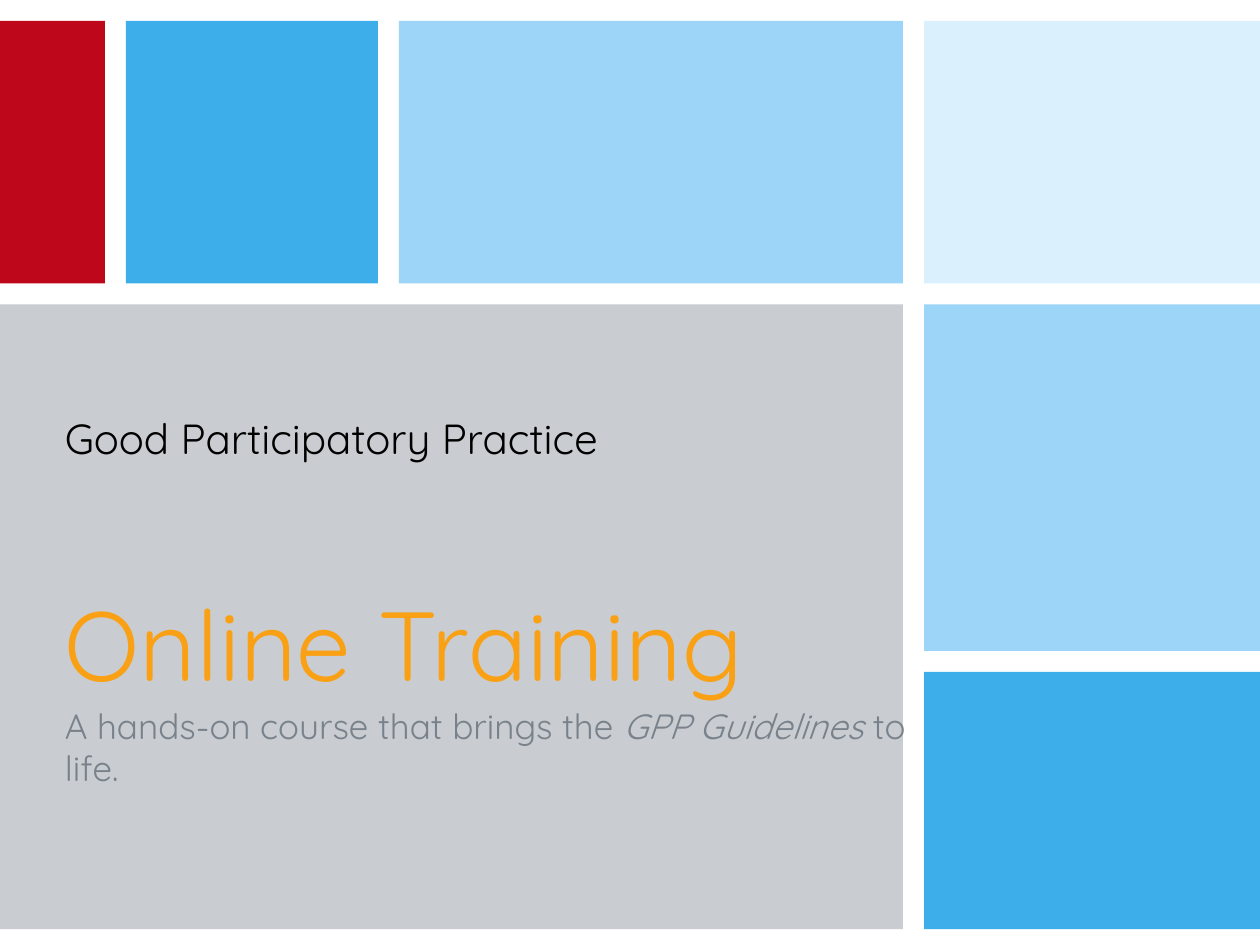
from pptx import Presentation
from pptx.dml.color import RGBColor
from pptx.enum.shapes import MSO_SHAPE as Shape
from pptx.enum.text import MSO_ANCHOR as Anchor
from pptx.util import Inches, Pt

COLORS = {
    "red": "BF071C",
    "blue": "3DAEEA",
    "sky": "9CD5F7",
    "pale": "DAF0FD",
    "panel": "C9CDD1",
    "black": "000000",
    "orange": "FAA014",
    "slate": "79828B",
}
FONT = "Quicksand"
COLUMNS, ROWS = 60, 45
CELL = Inches(10) / COLUMNS

# Mosaic edges in grid cells; neighbouring tiles are one cell apart.
TOP_BAND = (1, 13.5)
LOWER_BAND = (14.5, 44.25)
RIGHT_BAND = (44, COLUMNS)
TILES = [
    ((0, 43), LOWER_BAND, "panel"),
    ((0, 5), TOP_BAND, "red"),
    ((6, 18), TOP_BAND, "blue"),
    ((19, 43), TOP_BAND, "sky"),
    (RIGHT_BAND, TOP_BAND, "pale"),
    (RIGHT_BAND, (14.5, 31), "sky"),
    (RIGHT_BAND, (32, 44.25), "blue"),
]


def grid_box(columns, rows):
    """Turn column and row edges into left, top, width and height."""
    (left, right), (top, bottom) = columns, rows
    return [round(n * CELL) for n in (left, top, right - left, bottom - top)]


def add_tile(slide, columns, rows, color):
    tile = slide.shapes.add_shape(Shape.RECTANGLE, *grid_box(columns, rows))
    tile.shadow.inherit = False
    tile.fill.solid()
    tile.fill.fore_color.rgb = RGBColor.from_string(COLORS[color])
    tile.line.fill.background()


def add_text_area(slide, columns, rows, anchor):
    frame = slide.shapes.add_textbox(*grid_box(columns, rows)).text_frame
    frame.word_wrap = True
    frame.vertical_anchor = anchor
    return frame


def write(paragraph, pieces, size, color):
    """Fill a paragraph with (text, italic) pieces in one size and colour."""
    for text, italic in pieces:
        run = paragraph.add_run()
        run.text = text
        run.font.name = FONT
        run.font.size = Pt(size)
        run.font.italic = italic
        run.font.color.rgb = RGBColor.from_string(COLORS[color])


def main():
    prs = Presentation()
    prs.slide_width = round(COLUMNS * CELL)
    prs.slide_height = round(ROWS * CELL)
    slide = prs.slides.add_slide(prs.slide_layouts[6])

    for columns, rows, color in TILES:
        add_tile(slide, columns, rows, color)

    title = add_text_area(slide, (2.5, 53.5), (16, 25.7), Anchor.MIDDLE)
    write(title.paragraphs[0], [("Good Participatory Practice", False)], 24, "black")

    course = add_text_area(slide, (2.5, 45), (27.5, 38.5), Anchor.TOP)
    write(course.paragraphs[0], [("Online Training", False)], 56, "orange")
    summary = course.add_paragraph()
    summary.space_before = Pt(2)
    write(summary, [
        ("A hands-on course that brings the ", False),
        ("GPP Guidelines", True),
        (" to life.", False),
    ], 20, "slate")

    prs.save("out.pptx")


if __name__ == "__main__":
    main()
